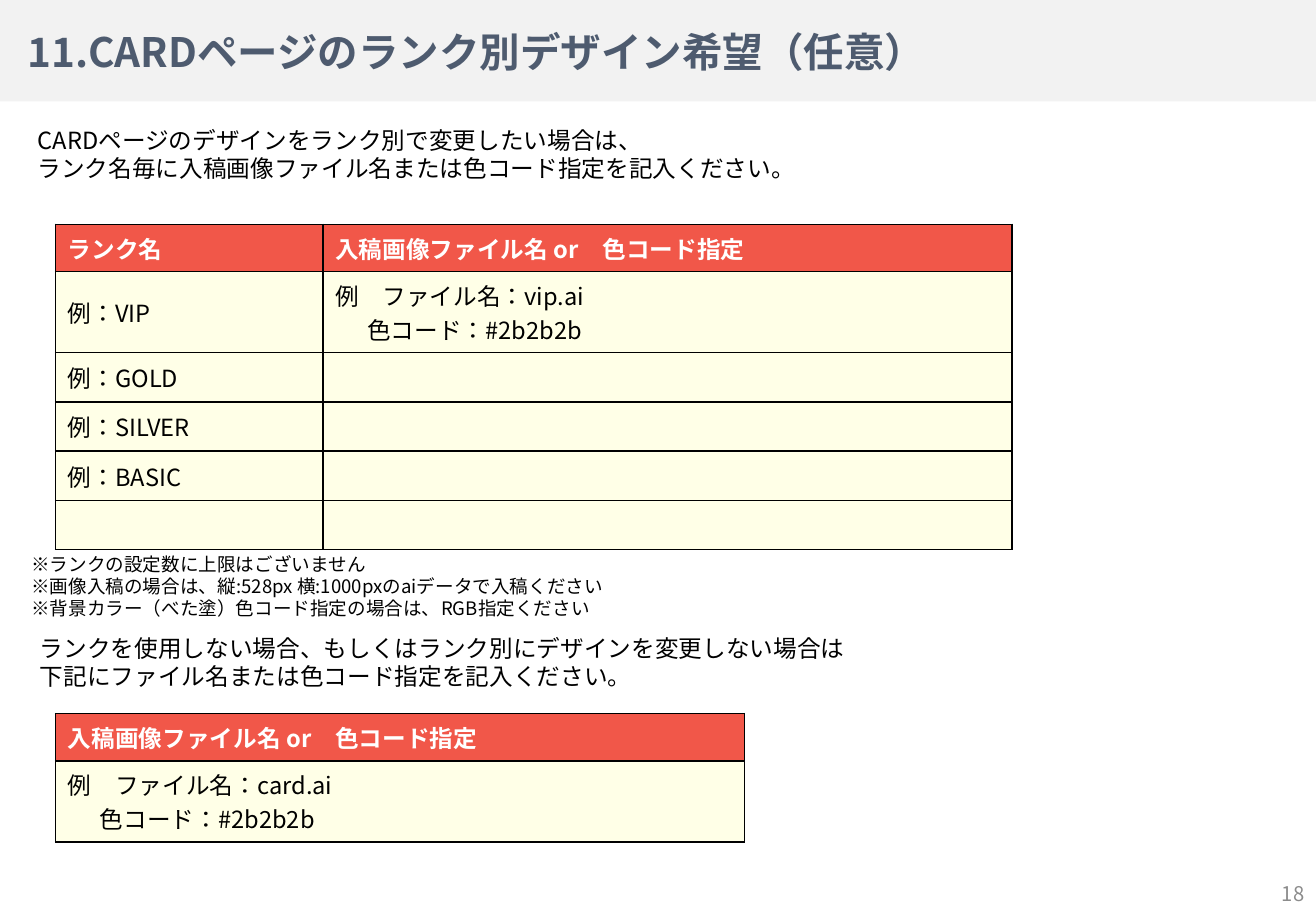
from lxml.etree import SubElement
from pptx import Presentation
from pptx.dml.color import RGBColor
from pptx.enum.lang import MSO_LANGUAGE_ID as Lang
from pptx.enum.shapes import MSO_SHAPE as Kind
from pptx.enum.text import MSO_ANCHOR as Anchor, MSO_AUTO_SIZE as Auto, PP_ALIGN as Align
from pptx.oxml.ns import qn
from pptx.util import Pt


def color(code):
    return RGBColor.from_string(code)


class Page:
    font = "Noto Sans CJK JP"
    ink = "000000"
    red = "F15749"
    cream = "FFFFE7"
    size = 14

    def __init__(self, deck):
        self.slide = deck.slides.add_slide(deck.slide_layouts[5])
        self.shapes = self.slide.shapes

    def style(self, frame, size, ink, bold=False, align=Align.LEFT):
        for para in frame.paragraphs:
            para.alignment = align
            for run in para.runs:
                face = run.font
                face.name, face.size, face.bold = self.font, Pt(size), bold
                face.language_id = Lang.JAPANESE
                face.color.rgb = color(ink)
                SubElement(face._element, qn("a:ea")).set("typeface", self.font)
            if not para.runs:
                para._p.get_or_add_endParaRPr().set("sz", str(size * 100))

    def band(self, box, fill):
        shape = self.shapes.add_shape(Kind.RECTANGLE, *map(Pt, box))
        shape.shadow.inherit = False
        shape.fill.solid()
        shape.fill.fore_color.rgb = color(fill)
        shape.line.fill.background()

    def title(self, box, text, ink):
        shape = self.shapes.title
        self.shapes._spTree.append(shape._element)
        shape.left, shape.top, shape.width, shape.height = map(Pt, box)
        frame = shape.text_frame
        frame.text = text
        frame.auto_size = Auto.NONE
        frame.vertical_anchor = Anchor.MIDDLE
        self.style(frame, 24, ink, True)

    def text(self, box, text, size=size, ink=ink, anchor=Anchor.MIDDLE,
             pad=(4.3, 4.3), wrap=True, align=Align.LEFT):
        frame = self.shapes.add_textbox(*map(Pt, box)).text_frame
        frame.text = text
        frame.word_wrap = wrap
        frame.vertical_anchor = anchor
        frame.margin_left = frame.margin_right = Pt(pad[0])
        frame.margin_top = frame.margin_bottom = Pt(pad[1])
        self.style(frame, size, ink, align=align)

    def border(self, cell):
        props = cell._tc.get_or_add_tcPr()
        for spot, side in enumerate(("lnL", "lnR", "lnT", "lnB")):
            line = props.makeelement(qn(f"a:{side}"), {"w": str(Pt(1))})
            fill = SubElement(line, qn("a:solidFill"))
            SubElement(fill, qn("a:srgbClr")).set("val", self.ink)
            props.insert(spot, line)

    def table(self, left, top, cols, rows, data):
        box = map(Pt, (left, top, sum(cols), sum(rows)))
        grid = self.shapes.add_table(len(rows), len(cols), *box).table
        for col, width in zip(grid.columns, cols):
            col.width = Pt(width)
        for row, high in zip(grid.rows, rows):
            row.height = Pt(high)
        for r, line in enumerate(data):
            for c, text in enumerate(line):
                cell = grid.cell(r, c)
                cell.text = text
                cell.vertical_anchor = Anchor.MIDDLE
                cell.fill.solid()
                cell.fill.fore_color.rgb = color(self.cream if r else self.red)
                self.style(cell.text_frame, self.size, self.ink if r else "FFFFFF", not r)
                for para in cell.text_frame.paragraphs[1:]:
                    para._p.get_or_add_pPr().set("marL", str(Pt(19)))
                self.border(cell)


def main():
    deck = Presentation()
    deck.slide_width, deck.slide_height = Pt(780), Pt(540)
    page = Page(deck)
    page.band((0, 0, 780, 60.2), "F2F2F2")
    page.title((9, 12.2, 701, 36.7), "11.CARDページのランク別デザイン希望（任意）", "4E5B6F")
    page.text((18, 70.5, 646, 41.8),
              "CARDページのデザインをランク別で変更したい場合は、\n"
              "ランク名毎に入稿画像ファイル名または色コード指定を記入ください。")
    page.text((11.5, 324, 639, 47.5),
              "※ランクの設定数に上限はございません\n"
              "※画像入稿の場合は、縦:528px 横:1000pxのaiデータで入稿ください\n"
              "※背景カラー（べた塗）色コード指定の場合は、RGB指定ください",
              size=11, anchor=Anchor.TOP, pad=(7.2, 3.6))
    page.text((19.4, 371.5, 646, 41.8),
              "ランクを使用しない場合、もしくはランク別にデザインを変更しない場合は\n"
              "下記にファイル名または色コード指定を記入ください。")
    head = "入稿画像ファイル名 or　色コード指定"
    hint = "例　ファイル名：{}.ai\n色コード：#2b2b2b"
    ranks = [["例：" + name, ""] for name in ("GOLD", "SILVER", "BASIC")]
    page.table(33, 133, (158.4, 408.4), (28, 48) + (29.2,) * 4,
               [["ランク名", head], ["例：VIP", hint.format("vip")], *ranks, ["", ""]])
    page.table(33, 423, (408.4,), (28, 48), [[head], [hint.format("card")]])
    page.text((754.5, 522.5, 24, 14.5), "18", size=12, ink="8C8C8C", pad=(0, 0),
              wrap=False, align=Align.CENTER)
    deck.save("out.pptx")


if __name__ == "__main__":
    main()
